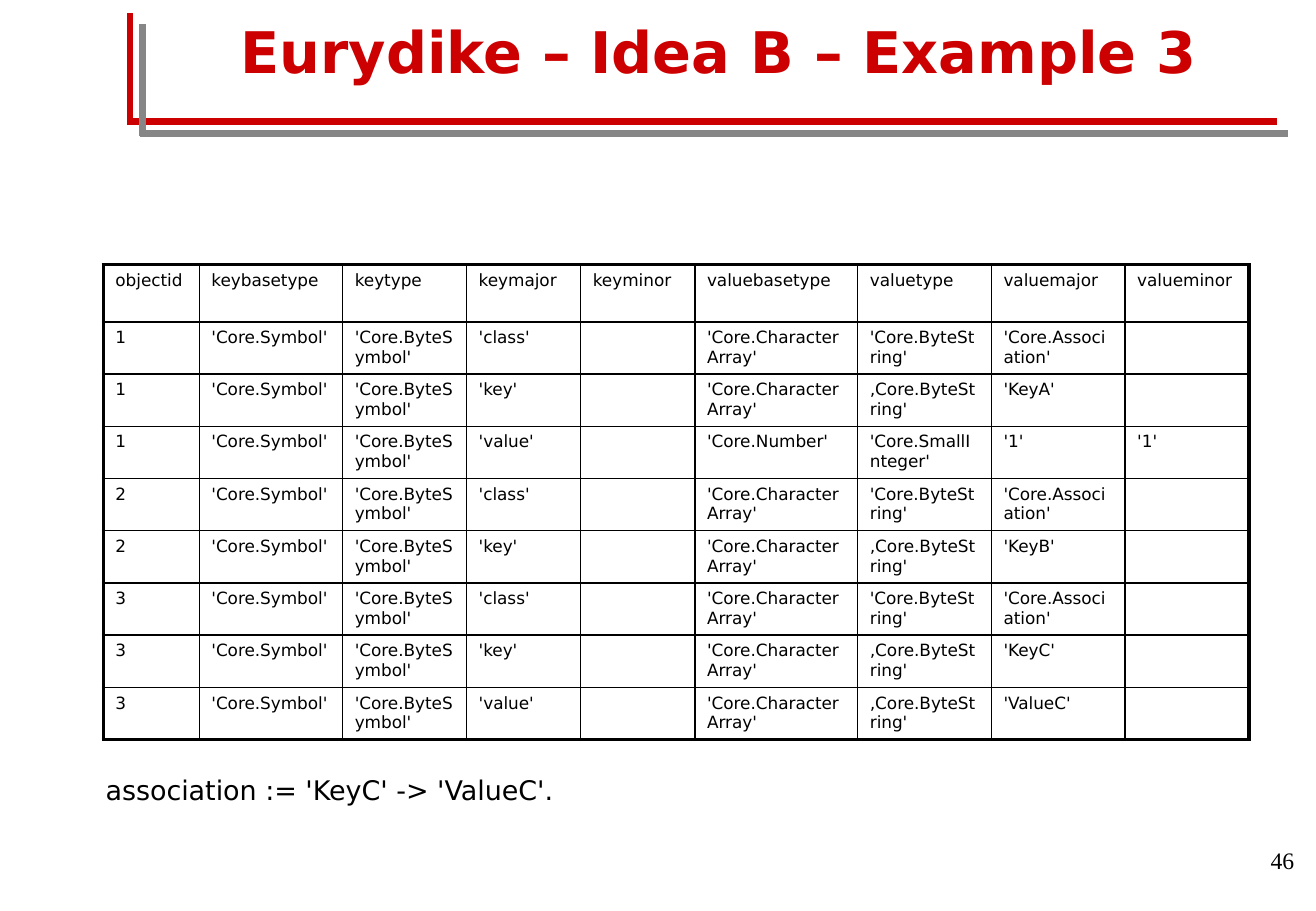
import pptx
import pptx.dml.color
import pptx.enum.shapes
import pptx.enum.text
import pptx.oxml
import pptx.oxml.ns
import pptx.util

Inches = pptx.util.Inches
Pt = pptx.util.Pt
ALIGN = pptx.enum.text.PP_ALIGN
ANCHOR = pptx.enum.text.MSO_ANCHOR
SANS = "DejaVu Sans"
RED, GRAY, BLACK = "CC0000", "868686", "000000"

LINES = [
    (1.06, 1, 10.51, 1, RED),
    (1.07, 1.03, 1.07, 0.11, RED),
    (1.15, 1.1, 10.6, 1.1, GRAY),
    (1.17, 1.12, 1.17, 0.2, GRAY),
]
HEADS = ["objectid", "keybasetype", "keytype", "keymajor", "keyminor",
         "valuebasetype", "valuetype", "valuemajor", "valueminor"]
WIDTHS = [0.79, 1.18, 1.02, 0.94, 0.94, 1.34, 1.1, 1.1, 1.02]
KEY = ["'Core.Symbol'", "'Core.ByteSymbol'"]
CLASS = ["'class'", "", "'Core.CharacterArray'", "'Core.ByteString'",
         "'Core.Association'", ""]
NUMBER = ["'value'", "", "'Core.Number'", "'Core.SmallInteger'", "'1'", "'1'"]


def text_row(major, value):
    return [major, "", "'Core.CharacterArray'", "‚Core.ByteString'", value, ""]


ENTRIES = [
    ("1", CLASS),
    ("1", text_row("'key'", "'KeyA'")),
    ("1", NUMBER),
    ("2", CLASS),
    ("2", text_row("'key'", "'KeyB'")),
    ("3", CLASS),
    ("3", text_row("'key'", "'KeyC'")),
    ("3", text_row("'value'", "'ValueC'")),
]


def color(code):
    return pptx.dml.color.RGBColor.from_string(code)


def assign(item, values):
    for name, value in values.items():
        setattr(item, name, value)


def write(frame, text, size, font=SANS, ink=BLACK, bold=False, **format):
    frame.text = text
    line = frame.paragraphs[0]
    assign(line, format)
    assign(line.font, {"size": Pt(size), "name": font, "bold": bold})
    line.font.color.rgb = color(ink)


def place(shape, left, top, width, height):
    assign(shape, {"left": Inches(left), "top": Inches(top),
                   "width": Inches(width), "height": Inches(height)})


def add_text(slide, box, text, size, anchor, **format):
    shape = slide.shapes.add_textbox(*map(Inches, box))
    assign(shape.text_frame, {"word_wrap": True, "vertical_anchor": anchor})
    write(shape.text_frame, text, size, **format)


def add_line(slide, left, top, right, bottom, ink):
    line = slide.shapes.add_connector(
        pptx.enum.shapes.MSO_CONNECTOR.STRAIGHT,
        *map(Inches, (left, top, right, bottom)))
    line.line.color.rgb = color(ink)
    line.line.width = Pt(4)
    effect = pptx.oxml.parse_xml(
        f"<a:effectLst {pptx.oxml.ns.nsdecls('a')}/>")
    line._element.spPr.append(effect)


def add_edge(cell, index, side, width):
    edge = pptx.oxml.parse_xml(
        f"<a:ln{side} {pptx.oxml.ns.nsdecls('a')} w='{Pt(width)}'>"
        f"<a:solidFill><a:srgbClr val='{BLACK}'/></a:solidFill>"
        f"</a:ln{side}>")
    cell._tc.get_or_add_tcPr().insert(index, edge)


def add_grid(slide):
    rows = [HEADS] + [[key] + KEY + rest for key, rest in ENTRIES]
    heights = [0.47] + [0.43] * len(ENTRIES)
    box = (0.85, 2.18, sum(WIDTHS), sum(heights))
    table = slide.shapes.add_table(
        len(rows), len(HEADS), *map(Inches, box)).table
    assign(table, {"first_row": False, "horz_banding": False})
    for column, width in zip(table.columns, WIDTHS):
        column.width = Inches(width)
    for row, height in zip(table.rows, heights):
        row.height = Inches(height)
    for y, row in enumerate(rows):
        for x, text in enumerate(row):
            cell = table.cell(y, x)
            cell.fill.background()
            write(cell.text_frame, text, 10)
            outer = {"L": x == 0, "R": x == len(HEADS) - 1,
                     "T": y == 0, "B": y == len(rows) - 1}
            for index, (side, thick) in enumerate(outer.items()):
                add_edge(cell, index, side, 2.25 if thick else 1)


def main():
    deck = pptx.Presentation()
    assign(deck, {"slide_width": Inches(10.83), "slide_height": Inches(7.5)})
    slide = deck.slides.add_slide(deck.slide_layouts[5])
    for line in LINES:
        add_line(slide, *line)
    title = slide.shapes.title
    place(title, 1, 0, 9.83, 0.83)
    title.text_frame.vertical_anchor = ANCHOR.MIDDLE
    write(title.text_frame, "Eurydike – Idea B – Example 3", 34,
          ink=RED, bold=True, alignment=ALIGN.CENTER)
    add_grid(slide)
    add_text(slide, (0.77, 6.35, 9.91, 0.71),
             "association := 'KeyC' -> 'ValueC'.", 16, ANCHOR.TOP,
             line_spacing=0.9)
    add_text(slide, (8.49, 6.83, 2.26, 0.5), "46", 14, ANCHOR.MIDDLE,
             font="Times New Roman", alignment=ALIGN.RIGHT)
    deck.save("out.pptx")


if __name__ == "__main__":
    main()
